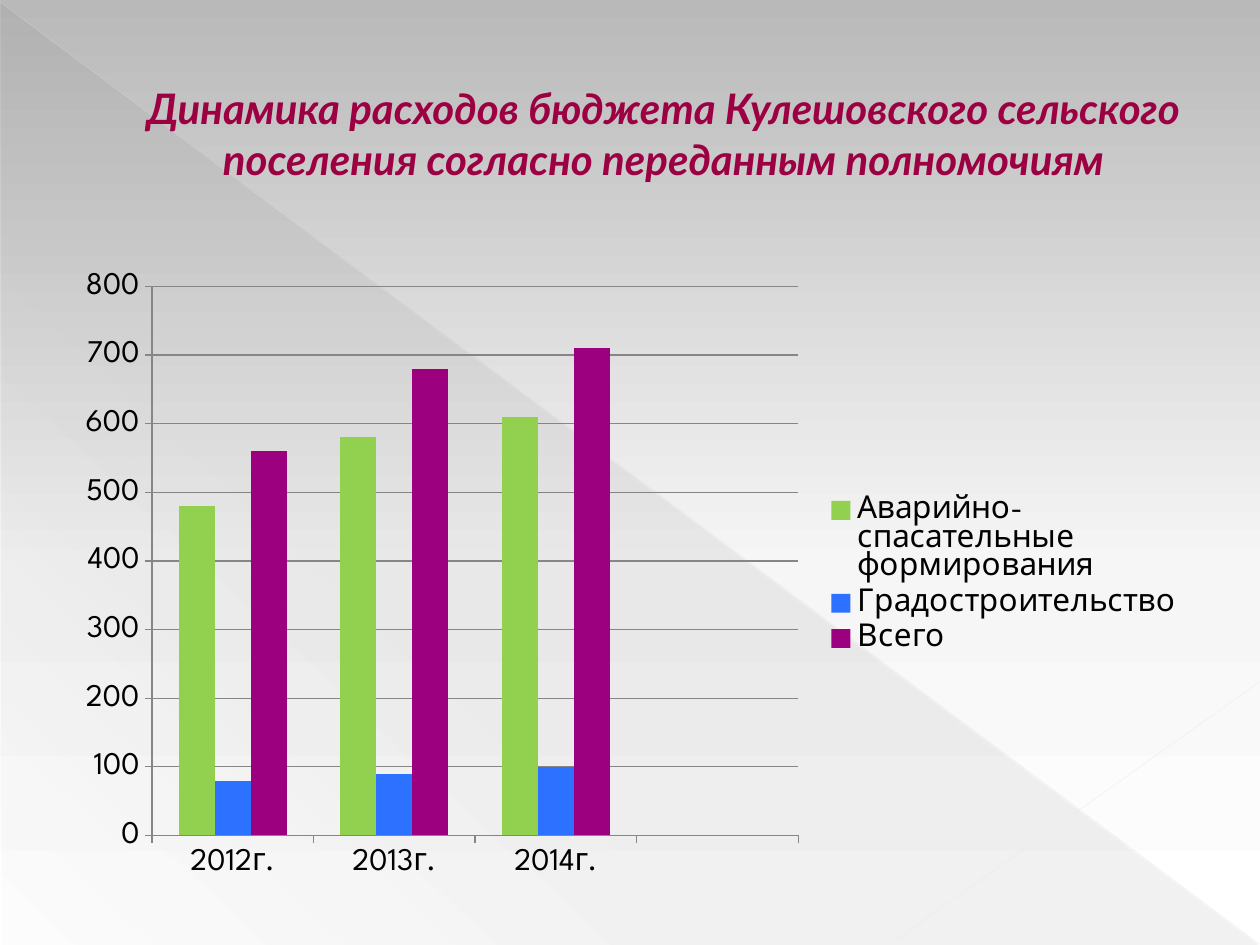
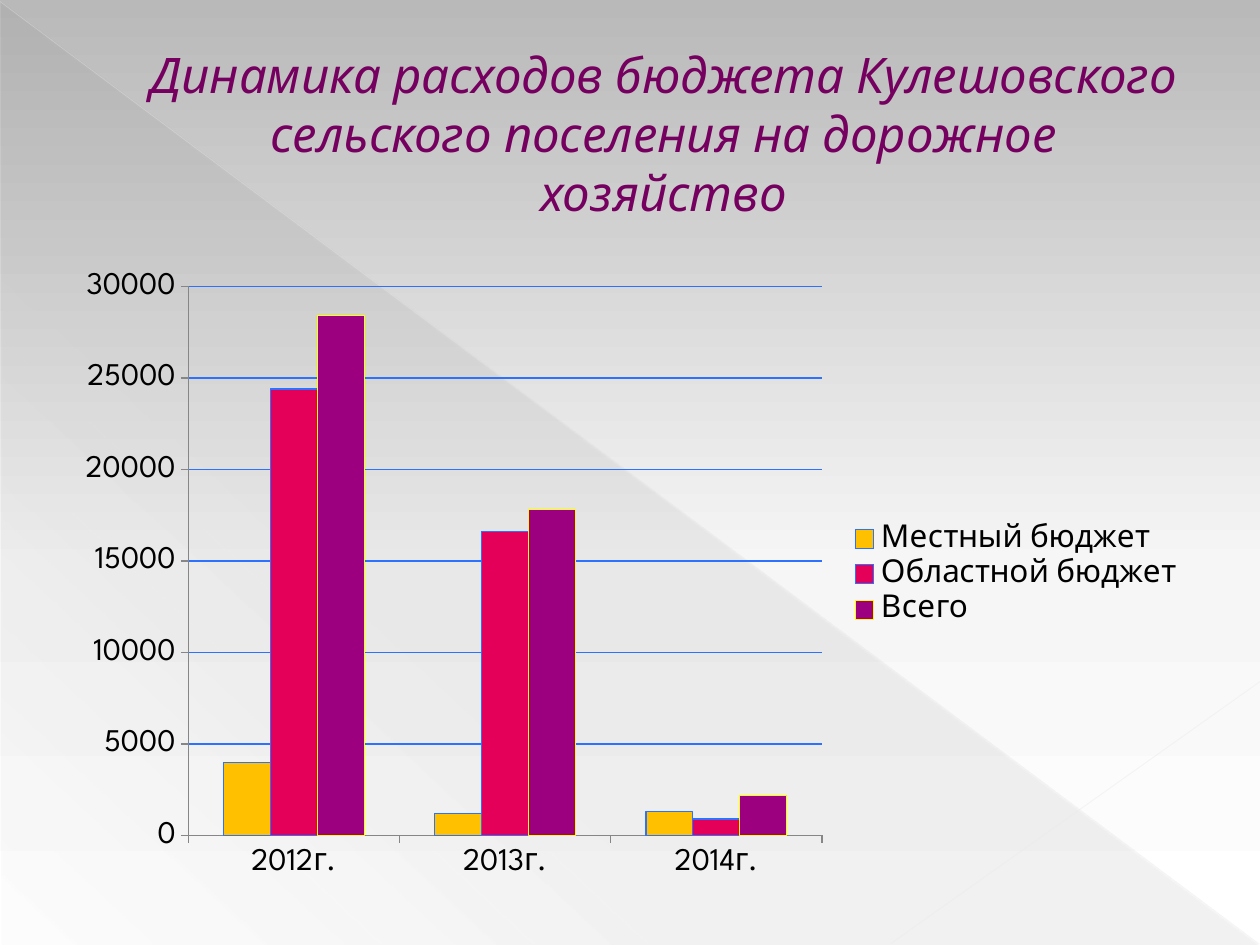
import dataclasses

import lxml.etree
import pptx
import pptx.chart.data
import pptx.dml.color
import pptx.enum.chart
import pptx.enum.shapes
import pptx.enum.text
import pptx.oxml.ns
import pptx.util

Cm = pptx.util.Cm
Pt = pptx.util.Pt
RGBColor = pptx.dml.color.RGBColor
qn = pptx.oxml.ns.qn

BLACK = RGBColor(0x00, 0x00, 0x00)
AXIS_GREY = RGBColor(0x86, 0x86, 0x86)
SHADE_GREY = RGBColor(0x66, 0x66, 0x66)
DIAGONAL_GREY = RGBColor(0xE8, 0xE8, 0xE8)
CORNER_GREY = RGBColor(0xEA, 0xEA, 0xEA)
SKY_TOP = RGBColor(0xB9, 0xB9, 0xB9)
SKY_MIDDLE = RGBColor(0xF6, 0xF6, 0xF6)
WHITE = RGBColor(0xFF, 0xFF, 0xFF)
CRIMSON = RGBColor(0x9C, 0x00, 0x42)
PLUM = RGBColor(0x75, 0x00, 0x5F)
TITLE_EDGE = RGBColor(0xB1, 0x27, 0x61)
GREEN = RGBColor(0x92, 0xD0, 0x50)
BLUE = RGBColor(0x2C, 0x71, 0xFF)
PURPLE = RGBColor(0x9C, 0x00, 0x7F)
AMBER = RGBColor(0xFF, 0xC0, 0x00)
PINK = RGBColor(0xE4, 0x00, 0x59)
YELLOW = RGBColor(0xFF, 0xFF, 0x00)

CHART_FONT = "League Spartan"


@dataclasses.dataclass
class Box:
    """Left, top, width and height in centimetres."""
    left: float
    top: float
    width: float
    height: float

    def lengths(self):
        return [Cm(value) for value in dataclasses.astuple(self)]


PAGE_BOX = Box(0, 0, 25.4, 19.05)
TITLE_BOX = Box(1.27, 0.74, 22.86, 3.89)
CHART_BOX = Box(1.27, 5.23, 22.86, 12.7)


def set_format(target, values):
    for name, value in values.items():
        setattr(target, name, value)


def add_alpha(color_element, percent):
    lxml.etree.SubElement(color_element, qn("a:alpha"), val=str(percent * 1000))


def paint_gradient(element, stops, angle):
    """Replace the first solid fill in element; stops are (position, colour, opacity)."""
    solid = element.find(".//" + qn("a:solidFill"))
    gradient = lxml.etree.Element(qn("a:gradFill"), rotWithShape="1")
    stop_list = lxml.etree.SubElement(gradient, qn("a:gsLst"))
    for position, color, opacity in stops:
        stop = lxml.etree.SubElement(stop_list, qn("a:gs"), pos=str(position * 1000))
        add_alpha(lxml.etree.SubElement(stop, qn("a:srgbClr"), val=str(color)), opacity)
    lxml.etree.SubElement(gradient, qn("a:lin"), ang=str(angle * 60000), scaled="0")
    solid.getparent().replace(solid, gradient)


def set_background(deck):
    master = deck.slide_master
    master.background.fill.solid()
    stops = [(0, SKY_TOP, 100), (60, SKY_MIDDLE, 100), (100, WHITE, 100)]
    paint_gradient(master.element, stops, 90)


def add_backdrop(page, box):
    # Shaded triangle
    triangle = page.shapes.add_shape(
        pptx.enum.shapes.MSO_SHAPE.RIGHT_TRIANGLE,
        Cm(box.left + 0.03), Cm(box.top + 0.05), Cm(box.width - 0.05), Cm(box.height - 0.05))
    triangle.shadow.inherit = False
    triangle.fill.solid()
    stops = [(0, SHADE_GREY, 10), (70, SHADE_GREY, 8), (100, SHADE_GREY, 1)]
    paint_gradient(triangle.element, stops, 133)
    triangle.line.fill.background()

    # Thin diagonal lines, both ending on the bottom edge
    right, bottom = box.left + box.width, box.top + box.height - 0.03
    lines = [
        (box.left, box.top + 0.03, right - 0.03, DIAGONAL_GREY, 0.39, 35),
        (right, box.top + 13.74, box.left + 17.96, CORNER_GREY, 0.47, 45),
    ]
    for start_x, start_y, end_x, color, weight, opacity in lines:
        line = page.shapes.add_connector(
            pptx.enum.shapes.MSO_CONNECTOR.STRAIGHT,
            Cm(start_x), Cm(start_y), Cm(end_x), Cm(bottom))
        line.line.width = Pt(weight)
        line.line.color.rgb = color
        add_alpha(line.element.find(".//" + qn("a:srgbClr")), opacity)
        lxml.etree.SubElement(line.element.find(qn("p:spPr")), qn("a:effectLst"))


def add_title(page, box, text, color, font_format):
    frame = page.shapes.add_textbox(*box.lengths()).text_frame
    set_format(frame, {
        "word_wrap": True,
        "margin_left": Cm(1.6),
        "vertical_anchor": pptx.enum.text.MSO_ANCHOR.MIDDLE,
    })
    para = frame.paragraphs[0]
    para.alignment = pptx.enum.text.PP_ALIGN.CENTER
    span = para.add_run()
    span.text = text
    set_format(span.font, {"italic": True, **font_format})
    span.font.color.rgb = color

    # Letter outline
    outline = lxml.etree.Element(qn("a:ln"), w=str(Pt(0.5)))
    fill = lxml.etree.SubElement(outline, qn("a:solidFill"))
    lxml.etree.SubElement(fill, qn("a:srgbClr"), val=str(TITLE_EDGE))
    span.font._element.insert(0, outline)


def add_column_chart(page, box, categories, series_rows, top_value, step, grid_color):
    """Series rows are (name, values, fill colour, line colour or None)."""
    data = pptx.chart.data.CategoryChartData()
    data.categories = categories
    for name, values, _, _ in series_rows:
        data.add_series(name, values)
    chart = page.shapes.add_chart(
        pptx.enum.chart.XL_CHART_TYPE.COLUMN_CLUSTERED, *box.lengths(), data).chart
    set_format(chart, {"has_title": False, "has_legend": True})
    set_format(chart.font, {"name": CHART_FONT, "size": Pt(18)})
    chart.font.color.rgb = BLACK
    set_format(chart.legend, {
        "position": pptx.enum.chart.XL_LEGEND_POSITION.RIGHT,
        "include_in_layout": False,
    })

    # Columns
    plot = chart.plots[0]
    set_format(plot, {"gap_width": 150, "overlap": 0, "vary_by_categories": False})
    for series, (_, _, fill_color, line_color) in zip(plot.series, series_rows):
        series.format.fill.solid()
        series.format.fill.fore_color.rgb = fill_color
        if line_color is None:
            series.format.line.fill.background()
        else:
            series.format.line.width = Pt(0.75)
            series.format.line.color.rgb = line_color

    # Axes and gridlines
    value_axis = chart.value_axis
    set_format(value_axis, {
        "minimum_scale": 0,
        "maximum_scale": top_value,
        "major_unit": step,
        "has_major_gridlines": True,
    })
    for axis in (chart.category_axis, value_axis):
        axis.major_tick_mark = pptx.enum.chart.XL_TICK_MARK.OUTSIDE
    colored_lines = [
        (chart.category_axis.format.line, AXIS_GREY),
        (value_axis.format.line, AXIS_GREY),
        (value_axis.major_gridlines.format.line, grid_color),
    ]
    for line, color in colored_lines:
        line.width = Pt(0.75)
        line.color.rgb = color


def add_chart_page(deck, title, chart):
    page = deck.slides.add_slide(deck.slide_layouts[6])
    add_backdrop(page, PAGE_BOX)
    add_title(page, TITLE_BOX, **title)
    add_column_chart(page, CHART_BOX, **chart)


def main():
    deck = pptx.Presentation()
    deck.slide_width, deck.slide_height = Cm(PAGE_BOX.width), Cm(PAGE_BOX.height)
    set_background(deck)
    years = ["2012г.", "2013г.", "2014г."]

    # Delegated powers
    add_chart_page(
        deck,
        title={
            "text": "Динамика расходов бюджета Кулешовского сельского поселения "
                    "согласно переданным полномочиям",
            "color": CRIMSON,
            "font_format": {"name": "Lato", "size": Pt(24), "bold": True},
        },
        chart={
            "categories": years + [""],
            "series_rows": [
                ("Аварийно-спасательные формирования", (480, 580, 610, None), GREEN, None),
                ("Градостроительство", (80, 90, 100, None), BLUE, None),
                ("Всего", (560, 680, 710, None), PURPLE, None),
            ],
            "top_value": 800,
            "step": 100,
            "grid_color": AXIS_GREY,
        })

    # Road maintenance
    add_chart_page(
        deck,
        title={
            "text": "Динамика расходов бюджета Кулешовского сельского поселения "
                    "на дорожное хозяйство",
            "color": PLUM,
            "font_format": {"name": "League Spartan", "size": Pt(28)},
        },
        chart={
            "categories": years,
            "series_rows": [
                ("Местный бюджет", (4000, 1200, 1300), AMBER, BLUE),
                ("Областной бюджет", (24400, 16600, 900), PINK, BLUE),
                ("Всего", (28400, 17800, 2200), PURPLE, YELLOW),
            ],
            "top_value": 30000,
            "step": 5000,
            "grid_color": BLUE,
        })

    deck.save("out.pptx")


if __name__ == "__main__":
    main()
